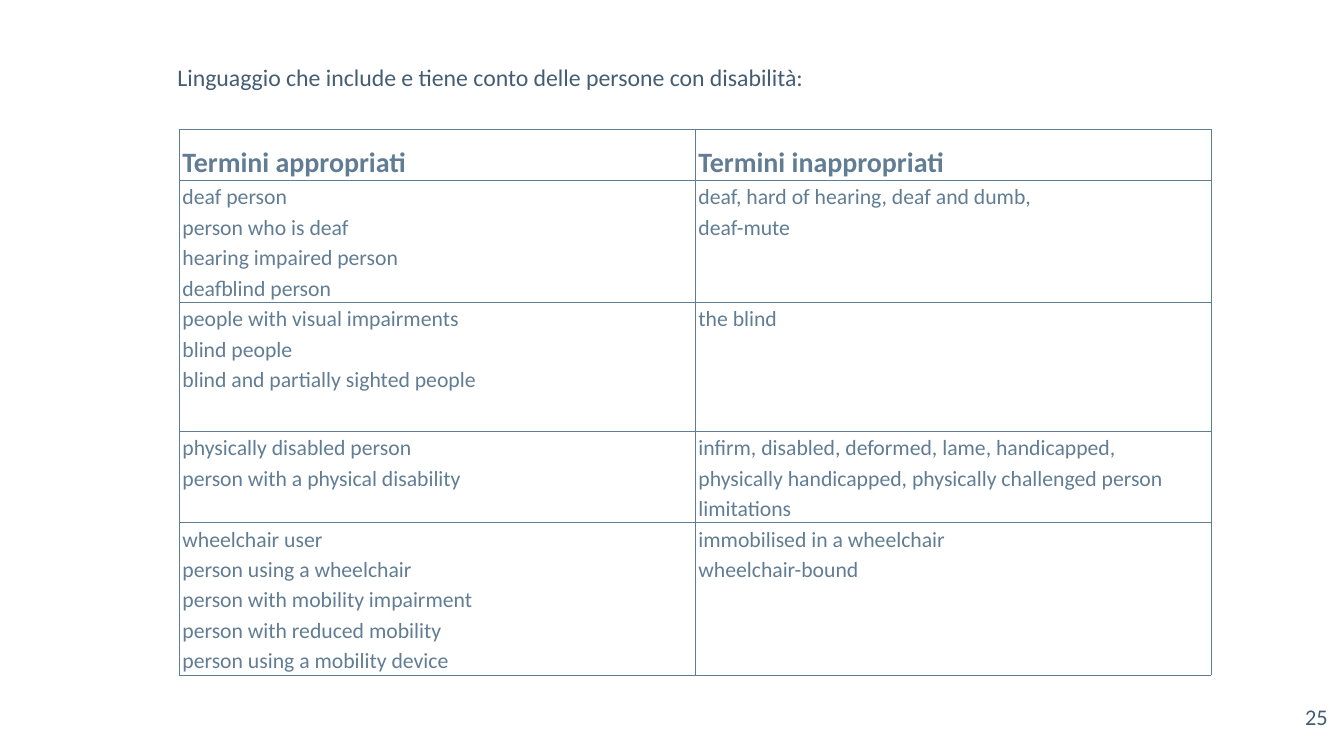
from lxml.etree import SubElement
from pptx import Presentation
from pptx.dml.color import RGBColor
from pptx.enum.text import MSO_ANCHOR, PP_ALIGN
from pptx.oxml.ns import qn
from pptx.util import Inches, Pt

HEAD = "Linguaggio che include e tiene conto delle persone con disabilità:"
PAGE = "25"
ROWS = [
    (["Termini appropriati"], ["Termini inappropriati"]),
    (
        ["deaf person", "person who is deaf", "hearing impaired person", "deafblind person"],
        ["deaf, hard of hearing, deaf and dumb,", "deaf-mute"],
    ),
    (
        ["people with visual impairments", "blind people", "blind and partially sighted people"],
        ["the blind"],
    ),
    (
        ["physically disabled person", "person with a physical disability"],
        [
            "infirm, disabled, deformed, lame, handicapped,",
            "physically handicapped, physically challenged person",
            "limitations",
        ],
    ),
    (
        [
            "wheelchair user",
            "person using a wheelchair",
            "person with mobility impairment",
            "person with reduced mobility",
            "person using a mobility device",
        ],
        ["immobilised in a wheelchair", "wheelchair-bound"],
    ),
]
TALL = [1.01, 2.42, 2.56, 1.81, 3.03]
WIDE = 10.24
HEX = {"dark": "445D73", "soft": "617D94", "back": "FFFFFF"}


def write(frame, lines, size, tone, align, space=1.0, bold=False):
    frame.word_wrap = True
    for i, line in enumerate(lines):
        para = frame.paragraphs[0] if i == 0 else frame.add_paragraph()
        para.alignment = align
        para.line_spacing = space
        para.space_before = para.space_after = Pt(0)
        run = para.add_run()
        run.text = line
        run.font.name = "Calibri"
        run.font.size = Pt(size)
        run.font.bold = bold
        run.font.color.rgb = RGBColor.from_string(HEX[tone])


def inset(frame, side, top):
    frame.margin_left = frame.margin_right = Inches(side)
    frame.margin_top = frame.margin_bottom = Inches(top)


def place(shape, left, top, width, height):
    shape.left, shape.top = Inches(left), Inches(top)
    shape.width, shape.height = Inches(width), Inches(height)


def edge(cell):
    props = cell._tc.get_or_add_tcPr()
    for side in ("lnL", "lnR", "lnT", "lnB"):
        line = SubElement(props, qn(f"a:{side}"), w=str(Pt(1)))
        fill = SubElement(line, qn("a:solidFill"))
        SubElement(fill, qn("a:srgbClr"), val=HEX["soft"])


def main():
    """Build the slide of fitting and unfitting terms."""
    deck = Presentation()
    deck.slide_width, deck.slide_height = Inches(26.67), Inches(15)
    slide = deck.slides.add_slide(deck.slide_layouts[5])
    slide.background.fill.solid()
    slide.background.fill.fore_color.rgb = RGBColor.from_string(HEX["back"])

    grid = slide.shapes.add_table(
        len(ROWS), 2, Inches(3.55), Inches(2.56), Inches(2 * WIDE), Inches(sum(TALL))
    ).table
    grid.first_row = grid.horz_banding = False
    for col in grid.columns:
        col.width = Inches(WIDE)
    for r, (row, tall) in enumerate(zip(ROWS, TALL)):
        grid.rows[r].height = Inches(tall)
        size, space = (40, 1.5) if r == 0 else (31, 1.15)
        for c, lines in enumerate(row):
            cell = grid.cell(r, c)
            inset(cell, 0.07, 0)
            edge(cell)
            cell.fill.background()
            write(cell.text_frame, lines, size, "soft", PP_ALIGN.JUSTIFY, space, r == 0)

    title = slide.shapes.title
    place(title, 3.46, 1.07, 21.75, 0.82)
    inset(title.text_frame, 0.06, 0.06)
    title.text_frame.vertical_anchor = MSO_ANCHOR.MIDDLE
    write(title.text_frame, [HEAD], 34, "dark", PP_ALIGN.LEFT, 1.15)

    box = slide.shapes.add_textbox(Inches(24.95), Inches(13.85), Inches(1.6), Inches(1.15))
    inset(box.text_frame, 0.2, 0.1)
    write(box.text_frame, [PAGE], 32, "dark", PP_ALIGN.RIGHT)

    deck.save("out.pptx")


if __name__ == "__main__":
    main()
